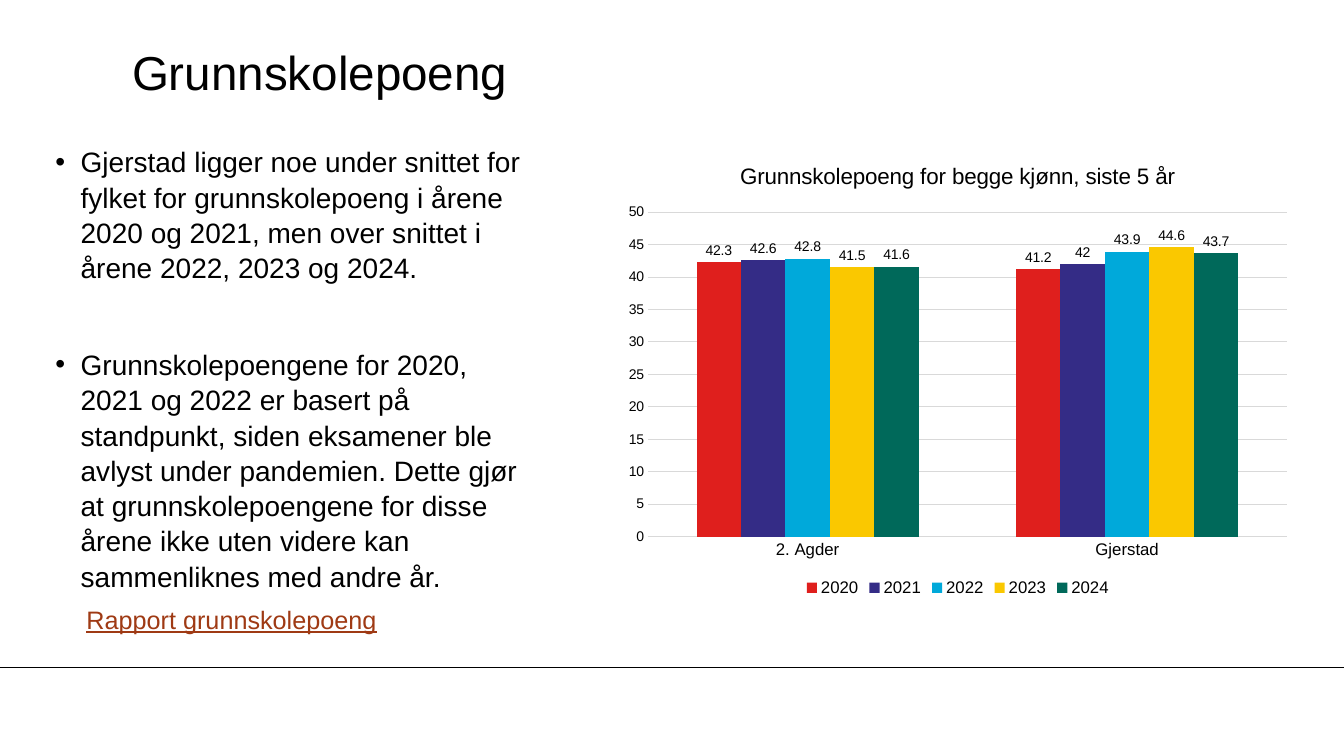
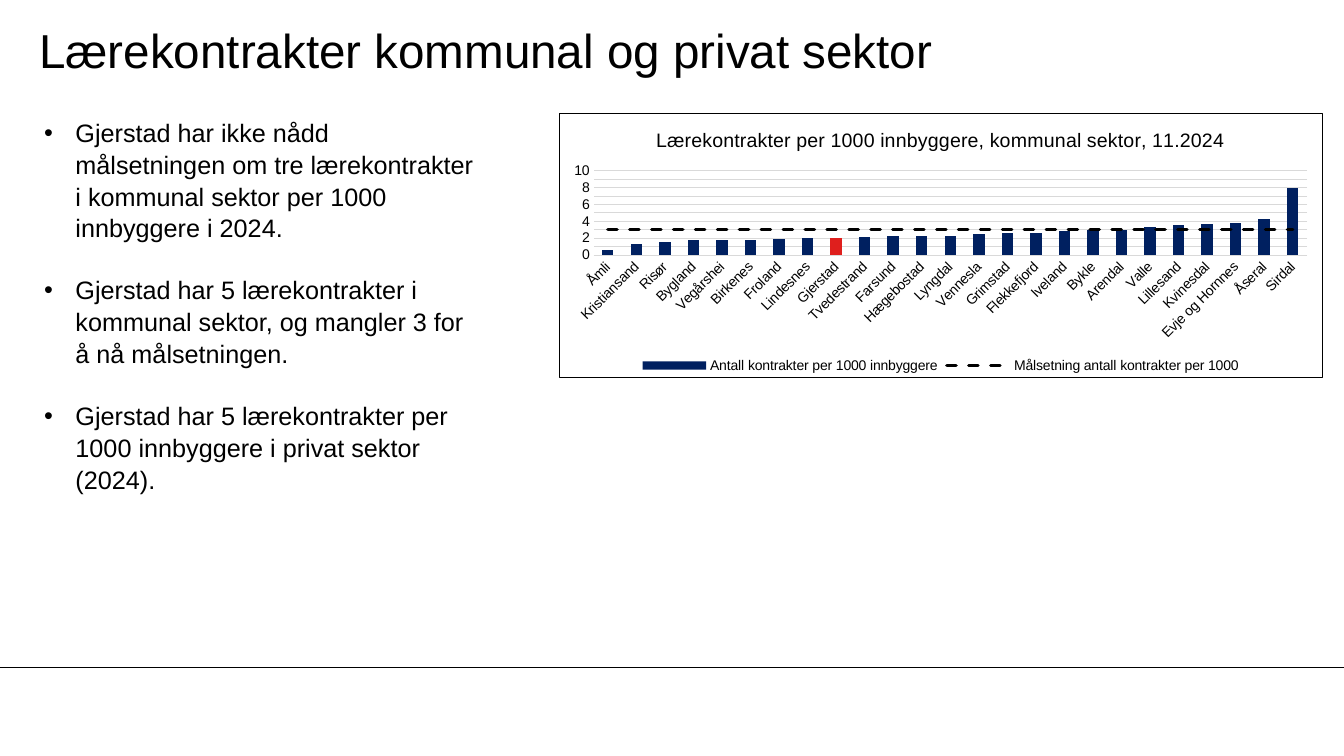
from lxml import etree
from pptx import Presentation
from pptx.chart.data import CategoryChartData
from pptx.dml.color import RGBColor
from pptx.enum.chart import (XL_CHART_TYPE, XL_LABEL_POSITION, XL_LEGEND_POSITION,
                             XL_MARKER_STYLE, XL_TICK_MARK)
from pptx.enum.dml import MSO_LINE
from pptx.enum.shapes import MSO_CONNECTOR
from pptx.enum.text import MSO_ANCHOR
from pptx.oxml import parse_xml
from pptx.oxml.ns import nsdecls, qn
from pptx.util import Inches, Pt

COLUMN = XL_CHART_TYPE.COLUMN_CLUSTERED
OUTSIDE = XL_LABEL_POSITION.OUTSIDE_END
BOTTOM = XL_LEGEND_POSITION.BOTTOM
NO_MARK, NO_TICK = XL_MARKER_STYLE.NONE, XL_TICK_MARK.NONE
DASH = MSO_LINE.DASH
STRAIGHT = MSO_CONNECTOR.STRAIGHT
MIDDLE, TOP = MSO_ANCHOR.MIDDLE, MSO_ANCHOR.TOP

FONT = "Arial"
COLORS = {"text": "000000", "grid": "D9D9D9", "link": "9F3A14", "navy": "002060",
          "red": "DF1F1D", "violet": "342C86", "blue": "00A9DA",
          "yellow": "FAC800", "green": "00695A"}
RGB = {name: RGBColor.from_string(value) for name, value in COLORS.items()}


def add_text(slide, box, lines, size, color="text", inset=(0, 0), anchor=TOP,
             indent=0, gap=0):
    """Add a text box; an indent turns its paragraphs into bullets."""
    frame = slide.shapes.add_textbox(*map(Inches, box)).text_frame
    frame.word_wrap = True
    frame.vertical_anchor = anchor
    frame.margin_left = frame.margin_right = Inches(inset[0])
    frame.margin_top = frame.margin_bottom = Inches(inset[1])
    frame.text = "\n".join(lines)
    for num, para in enumerate(frame.paragraphs):
        para.line_spacing = 1.05
        if num:
            para.space_before = Pt(gap)
        if indent:
            props = para._p.get_or_add_pPr()
            props.set("marL", str(Inches(indent)))
            props.set("indent", str(-Inches(indent)))
            etree.SubElement(props, qn("a:buFont")).set("typeface", FONT)
            etree.SubElement(props, qn("a:buChar")).set("char", "•")
        para.font.size = Pt(size)
        para.font.name = FONT
        para.font.color.rgb = RGB[color]
    return frame


def add_chart(slide, box, cats, series, title, size, cat_size, gap, border):
    """Add a column chart with the shared title, axis and legend style."""
    data = CategoryChartData()
    data.categories = cats
    for name, vals in series:
        data.add_series(name, vals)
    chart = slide.shapes.add_chart(COLUMN, *map(Inches, box), data).chart
    chart.font.size, chart.font.name = Pt(10), FONT
    chart.font.color.rgb = RGB["text"]

    # Title and legend
    chart.has_title = True
    chart.chart_title.include_in_layout = False
    para = chart.chart_title.text_frame.paragraphs[0]
    para.text = title
    font = para.runs[0].font
    font.size, font.name, font.bold = Pt(size), FONT, False
    font.color.rgb = RGB["text"]
    chart.has_legend = True
    chart.legend.position = BOTTOM
    chart.legend.include_in_layout = False
    chart.legend.font.size = Pt(cat_size)

    # Axes
    cat, val = chart.category_axis, chart.value_axis
    for axis in (cat, val):
        axis.major_tick_mark = axis.minor_tick_mark = NO_TICK
    cat.tick_labels.font.size = Pt(cat_size)
    val.tick_labels.font.size = Pt(10)
    val.minimum_scale = 0
    val.has_major_gridlines = True
    val.format.line.fill.background()
    for line in (cat.format.line, val.major_gridlines.format.line):
        line.color.rgb, line.width = RGB["grid"], Pt(0.75)

    # Columns and frame
    plot = chart.plots[0]
    plot.gap_width, plot.vary_by_categories = gap, False
    fill = (f'<a:solidFill><a:srgbClr val="{COLORS["text"]}"/></a:solidFill>'
            if border else "<a:noFill/>")
    chart._chartSpace.find(qn("c:chart")).addnext(parse_xml(
        f'<c:spPr {nsdecls("c", "a")}><a:noFill/>'
        f'<a:ln w="{Pt(0.75)}">{fill}</a:ln></c:spPr>'))
    return chart


prs = Presentation()
prs.slide_width, prs.slide_height = Inches(13.33), Inches(7.5)

# Shared title and footer rule
slides = []
for title, left, top in [("Grunnskolepoeng", 1.31, 0.32),
                         ("Lærekontrakter kommunal og privat sektor", 0.39, 0.1)]:
    slide = prs.slides.add_slide(prs.slide_layouts[6])
    rule = slide.shapes.add_connector(STRAIGHT, 0, Inches(6.62),
                                      prs.slide_width, Inches(6.62))
    rule.line.color.rgb, rule.line.width = RGB["text"], Pt(0.75)
    etree.SubElement(rule._element.spPr, qn("a:effectLst"))
    add_text(slide, (left, top, 11.1, 0.75), [title], 34, anchor=MIDDLE)
    slides.append(slide)
school, work = slides

# Slide 1: text and link
add_text(school, (0.55, 1.42, 4.72, 4.45), [
    "Gjerstad ligger noe under snittet for fylket for grunnskolepoeng i årene "
    "2020 og 2021, men over snittet i årene 2022, 2023 og 2024.",
    "Grunnskolepoengene for 2020, 2021 og 2022 er basert på standpunkt, siden "
    "eksamener ble avlyst under pandemien. Dette gjør at grunnskolepoengene for "
    "disse årene ikke uten videre kan sammenliknes med andre år.",
], 20, indent=0.25, gap=44)
link = add_text(school, (0.76, 5.93, 3.3, 0.4), ["Rapport grunnskolepoeng"], 18,
                color="link", inset=(0.1, 0.05))
link.paragraphs[0].runs[0].font.underline = True

# Slide 1: points by year
points = [("2020", (42.3, 41.2)), ("2021", (42.6, 42)), ("2022", (42.8, 43.9)),
          ("2023", (41.5, 44.6)), ("2024", (41.6, 43.7))]
chart = add_chart(school, (6.1, 1.42, 6.8, 4.54), ["2. Agder", "Gjerstad"], points,
                  "Grunnskolepoeng for begge kjønn, siste 5 år", 16, 12, 219, False)
for year, color in zip(chart.plots[0].series,
                       ("red", "violet", "blue", "yellow", "green")):
    year.format.fill.solid()
    year.format.fill.fore_color.rgb = RGB[color]
    labels = year.data_labels
    labels.show_value, labels.position = True, OUTSIDE
    labels.font.size, labels.font.name = Pt(10), FONT
    labels.font.color.rgb = RGB["text"]

# Slide 2: text
add_text(work, (0.34, 1.1, 4.55, 4.64), [
    "Gjerstad har ikke nådd målsetningen om tre lærekontrakter i kommunal sektor "
    "per 1000 innbyggere i 2024.",
    "Gjerstad har 5 lærekontrakter i kommunal sektor, og mangler 3 for å nå "
    "målsetningen.",
    "Gjerstad har 5 lærekontrakter per 1000 innbyggere i privat sektor (2024).",
], 18, inset=(0.1, 0.05), indent=0.31, gap=21.7)

# Slide 2: contracts by town, with the goal as a line
rates = {"Åmli": 0.6, "Kristiansand": 1.3, "Risør": 1.5, "Bygland": 1.8,
         "Vegårshei": 1.8, "Birkenes": 1.8, "Froland": 1.9, "Lindesnes": 2,
         "Gjerstad": 2, "Tvedestrand": 2.1, "Farsund": 2.3, "Hægebostad": 2.3,
         "Lyngdal": 2.3, "Vennesla": 2.5, "Grimstad": 2.6, "Flekkefjord": 2.6,
         "Iveland": 2.9, "Bykle": 3, "Arendal": 3, "Valle": 3.3, "Lillesand": 3.6,
         "Kvinesdal": 3.7, "Evje og Hornnes": 3.8, "Åseral": 4.3, "Sirdal": 8}
towns = list(rates)
chart = add_chart(work, (5.54, 1.12, 7.58, 2.63), towns,
                  [("Antall kontrakter per 1000 innbyggere", list(rates.values())),
                   ("Målsetning antall kontrakter per 1000", [3] * len(towns))],
                  "Lærekontrakter per 1000 innbyggere, kommunal sektor, 11.2024",
                  14, 10, 150, True)
val = chart.value_axis
val.maximum_scale, val.major_unit = 10, 1
val.tick_labels.number_format = "0"
val.tick_labels.number_format_is_linked = False
turn = chart.category_axis._element.xpath("c:txPr/a:bodyPr")[0]
turn.set("rot", "-2700000")
turn.set("vert", "horz")

bars, goal = chart.plots[0].series
for part, color in ((bars, "navy"), (bars.points[towns.index("Gjerstad")], "red")):
    part.format.fill.solid()
    part.format.fill.fore_color.rgb = RGB[color]

# Move the goal series to a line plot on the same axes
column = chart.plots[0]._element
row = goal._element
for flag in row.findall(qn("c:invertIfNegative")):
    row.remove(flag)
plot = parse_xml(f'<c:lineChart {nsdecls("c")}><c:grouping val="standard"/>'
                 '<c:varyColors val="0"/><c:marker val="1"/></c:lineChart>')
plot.insert(2, row)
for axis in column.findall(qn("c:axId")):
    etree.SubElement(plot, qn("c:axId")).set("val", axis.get("val"))
column.addnext(plot)
goal = chart.plots[1].series[0]
goal.smooth, goal.marker.style = False, NO_MARK
line = goal.format.line
line.color.rgb, line.width, line.dash_style = RGB["text"], Pt(2.25), DASH
row.xpath("c:spPr/a:ln")[0].set("cap", "rnd")

prs.save("out.pptx")
